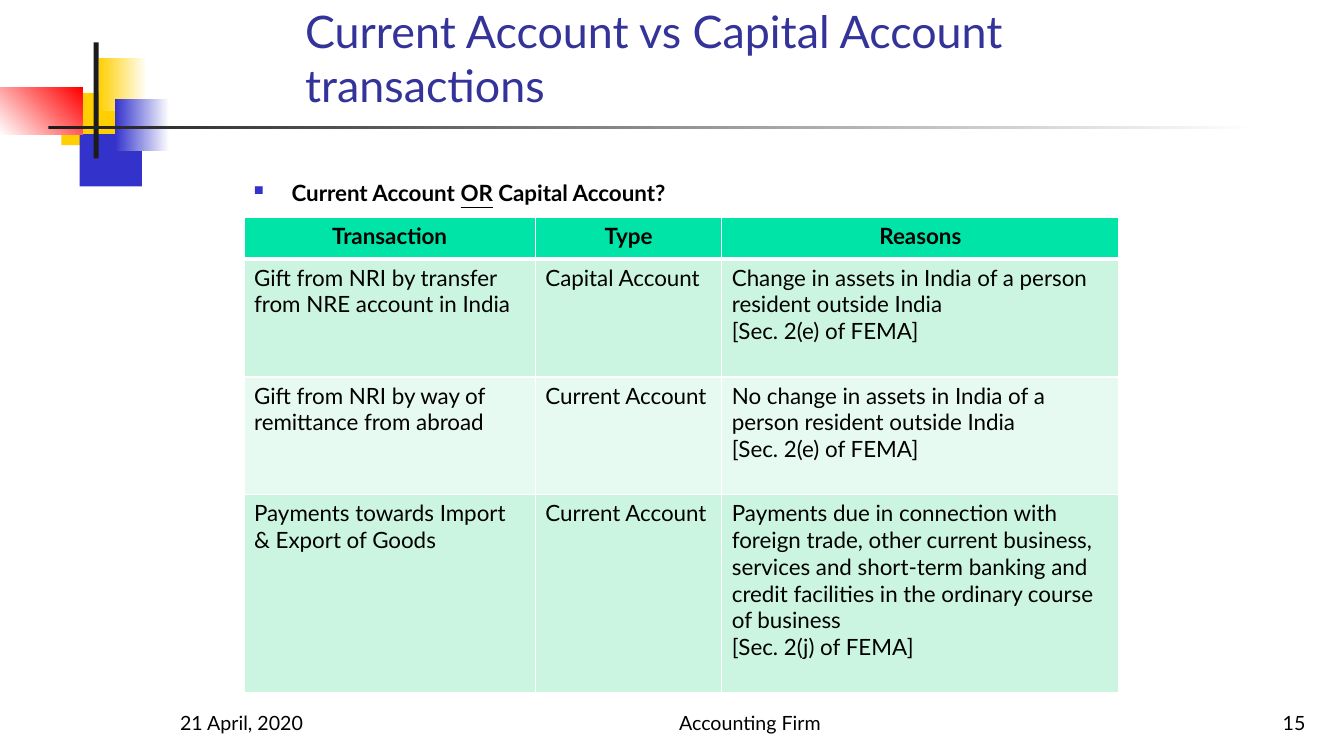
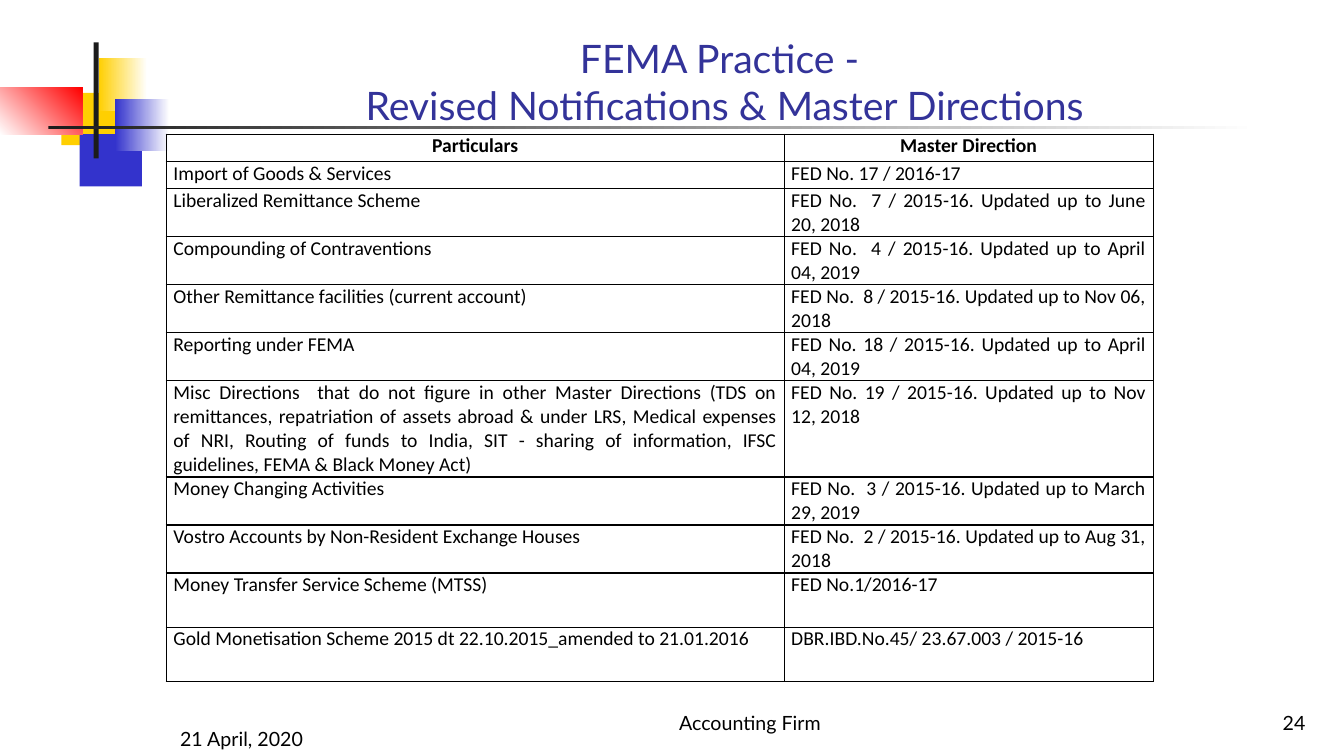
from dataclasses import dataclass

from lxml import etree
from pptx import Presentation
from pptx import util as u
from pptx.dml.color import RGBColor
from pptx.enum import shapes, text
from pptx.oxml.ns import qn

Cm, Pt = u.Cm, u.Pt
AL, ANC = text.PP_ALIGN, text.MSO_ANCHOR


@dataclass(frozen=True)
class Theme:
    font: str = "Lato"
    grid_font: str = "Calibri"
    title: str = "333399"
    ink: str = "000000"
    white: str = "FFFFFF"
    yellow: str = "FFCF01"
    blue: str = "3333CC"
    red: str = "FF0000"
    bar: str = "1C1C1C"
    header: str = "00E4A8"
    bands: tuple = ("CCF5E1", "E7FAF1")
    body_pt: int = 16
    small_pt: int = 14


T = Theme()


def write(tf, lines, size, align=AL.LEFT, color=T.ink, font=T.font, bold=False):
    """Fill a text frame; each line is a list of (text, underlined) runs or a string."""
    tf.word_wrap = True
    for i, line in enumerate(lines):
        p = tf.paragraphs[0] if i == 0 else tf.add_paragraph()
        p.alignment = align
        for words, underlined in ([(line, False)] if isinstance(line, str) else line):
            r = p.add_run()
            r.text = words
            r.font.size, r.font.name = Pt(size), font
            r.font.bold, r.font.underline = bold, underlined
            r.font.color.rgb = RGBColor.from_string(color)


def add_grid(s, left, top, cols, heights, rows, line, size, font, align, fills=None,
             header_rule=1, margins=None):
    """Add a table with ruled cells; fills holds one colour per row."""
    tbl = s.shapes.add_table(len(rows), len(cols), Cm(left), Cm(top),
                             Cm(sum(cols)), Cm(sum(heights))).table
    tbl.horz_banding = False
    for col, width in zip(tbl.columns, cols):
        col.width = Cm(width)
    for i, (row, height) in enumerate(zip(rows, heights)):
        tbl.rows[i].height = Cm(height)
        for j, content in enumerate(row):
            cell = tbl.cell(i, j)
            if margins:
                cell.margin_left = cell.margin_right = Cm(margins[0])
                cell.margin_top = cell.margin_bottom = Cm(margins[1])
            write(cell.text_frame, content.split("\n"), size, AL.CENTER if i == 0 else align,
                  font=font, bold=i == 0)
            tcPr = cell._tc.get_or_add_tcPr()
            for side in "LRTB":
                heavy = (i, side) in ((0, "B"), (1, "T"))
                ln = etree.SubElement(tcPr, qn(f"a:ln{side}"),
                                      w=str(Pt(header_rule if heavy else 1)))
                solid = etree.SubElement(ln, qn("a:solidFill"))
                etree.SubElement(solid, qn("a:srgbClr"), val=line)
            if fills:
                cell.fill.solid()
                cell.fill.fore_color.rgb = RGBColor.from_string(fills[i])
            else:
                cell.fill.background()


prs = Presentation()
prs.slide_width, prs.slide_height = Cm(33.87), Cm(19.05)

# Corner blocks and rules: left, top, width, height, colours, gradient angle
ORNAMENT = [
    (1.55, 2.34, 1.63, 1.32, [T.yellow], 0),
    (2.01, 3.38, 1.57, 1.32, [T.blue], 0),
    (2.49, 1.47, 1.22, 1.32, [T.yellow, T.white], 0),
    (2.9, 2.49, 1.37, 1.32, [T.blue, T.white], 0),
    (0, 2.21, 2.08, 1.17, [T.white, T.red], 45),
    (2.36, 1.07, 0.13, 2.92, [T.bar], 0),
    (1.22, 3.18, 30.48, 0.08, [T.bar, T.white], 0),
]

# Per slide: title lines, title size, alignment, top, height, date top, number
PAGES = [
    (["Current Account vs Capital Account transactions"], 32, AL.LEFT, 0.3, 2.64, 17.35, "15"),
    (["FEMA Practice - ", "Revised Notifications & Master Directions"], 28, AL.CENTER,
     0.58, 2.79, 17.76, "24"),
]

# Shared parts: ornament, title, footer
slides = []
for lines, size, align, top, height, date_top, number in PAGES:
    s = prs.slides.add_slide(prs.slide_layouts[6])
    slides.append(s)
    for x, y, w, h, colors, angle in ORNAMENT:
        sp = s.shapes.add_shape(shapes.MSO_SHAPE.RECTANGLE, Cm(x), Cm(y), Cm(w), Cm(h))
        sp.shadow.inherit = False
        sp.line.fill.background()
        if len(colors) == 1:
            sp.fill.solid()
            sp.fill.fore_color.rgb = RGBColor.from_string(colors[0])
        else:
            sp.fill.gradient()
            sp.fill.gradient_angle = angle
            for stop, color in zip(sp.fill.gradient_stops, colors):
                stop.color.rgb = RGBColor.from_string(color)
    for x, y, w, h, content, pt, side, color in [
        (7.44, top, 21.64, height, lines, size, align, T.title),
        (4.29, date_top, 7.06, 1.27, ["21 April, 2020"], T.small_pt, AL.LEFT, T.ink),
        (13.54, 17.35, 10.72, 1.27, ["Accounting Firm"], T.small_pt, AL.CENTER, T.ink),
        (26.09, 17.35, 7.06, 1.27, [number], T.small_pt, AL.RIGHT, T.ink),
    ]:
        tf = s.shapes.add_textbox(Cm(x), Cm(y), Cm(w), Cm(h)).text_frame
        tf.vertical_anchor = ANC.BOTTOM
        write(tf, content, pt, side, color)

# Slide 1: bulleted question
s = slides[0]
tf = s.shapes.add_textbox(Cm(6.15), Cm(4.39), Cm(23.06), Cm(1)).text_frame
write(tf, [[("Current Account ", False), ("OR", True), (" Capital Account?", False)]],
      T.body_pt, bold=True)
pPr = tf.paragraphs[0]._p.get_or_add_pPr()
pPr.set("marL", str(Cm(0.95)))
pPr.set("indent", str(-Cm(0.95)))
etree.SubElement(etree.SubElement(pPr, qn("a:buClr")), qn("a:srgbClr"), val=T.blue)
etree.SubElement(pPr, qn("a:buSzPct"), val="60000")
etree.SubElement(pPr, qn("a:buChar"), char="■")

# Slide 1: transactions table
transactions = [
    ("Transaction", "Type", "Reasons"),
    ("Gift from NRI by transfer from NRE account in India", "Capital Account",
     "Change in assets in India of a person resident outside India\n[Sec. 2(e) of FEMA]"),
    ("Gift from NRI by way of remittance from abroad", "Current Account",
     "No change in assets in India of a person resident outside India\n[Sec. 2(e) of FEMA]"),
    ("Payments towards Import & Export of Goods", "Current Account",
     "Payments due in connection with foreign trade, other current business, services and "
     "short-term banking and credit facilities in the ordinary course of business\n"
     "[Sec. 2(j) of FEMA]"),
]
add_grid(s, 6.15, 5.49, [7.34, 4.7, 10.01], [1.04, 2.97, 2.97, 4.98], transactions,
         T.white, T.body_pt, T.font, AL.LEFT,
         fills=[T.header, T.bands[0], T.bands[1], T.bands[0]], header_rule=3)

# Slide 2: master directions table
directions = [
    ("Particulars", "Master Direction"),
    ("Import of Goods & Services", "FED No. 17 / 2016-17"),
    ("Liberalized Remittance Scheme", "FED No.  7 / 2015-16. Updated up to June 20, 2018"),
    ("Compounding of Contraventions", "FED No.  4 / 2015-16. Updated up to April 04, 2019"),
    ("Other Remittance facilities (current account)",
     "FED No.  8 / 2015-16. Updated up to Nov 06, 2018"),
    ("Reporting under FEMA", "FED No. 18 / 2015-16. Updated up to April 04, 2019"),
    ("Misc Directions  that do not figure in other Master Directions (TDS on remittances, "
     "repatriation of assets abroad & under LRS, Medical expenses of NRI, Routing of funds "
     "to India, SIT - sharing of information, IFSC guidelines, FEMA & Black Money Act)",
     "FED No. 19 / 2015-16. Updated up to Nov 12, 2018"),
    ("Money Changing Activities", "FED No.  3 / 2015-16. Updated up to March 29, 2019"),
    ("Vostro Accounts by Non-Resident Exchange Houses",
     "FED No.  2 / 2015-16. Updated up to Aug 31, 2018"),
    ("Money Transfer Service Scheme (MTSS)", "FED No.1/2016-17"),
    ("Gold Monetisation Scheme 2015 dt 22.10.2015_amended to 21.01.2016",
     "DBR.IBD.No.45/ 23.67.003 / 2015-16"),
]
heights = [0.69] * 2 + [1.21] * 4 + [2.42] + [1.21] * 2 + [1.37] * 2
add_grid(slides[1], 4.19, 3.38, [15.57, 9.3], heights, directions,
         T.ink, T.small_pt, T.grid_font, AL.JUSTIFY, margins=(0.18, 0))

prs.save("out.pptx")
